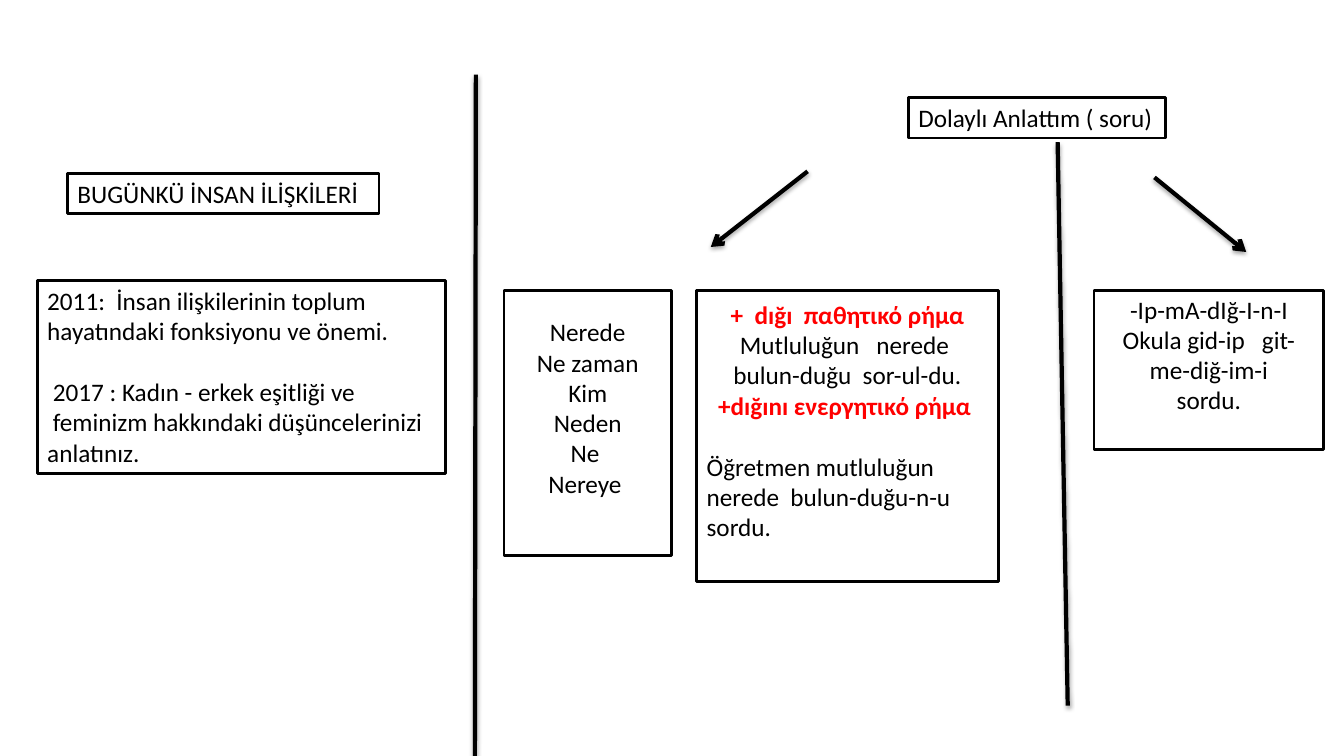
"""Builds a slide of boxed notes on human relations and Turkish indirect questions."""
import pptx
import pptx.util
import pptx.dml.color
import pptx.enum.shapes
import pptx.enum.text
import pptx.oxml
import pptx.oxml.ns
import lxml.etree

Inches, Pt = pptx.util.Inches, pptx.util.Pt
RGB = pptx.dml.color.RGBColor.from_string
qn = pptx.oxml.ns.qn
Fit = pptx.enum.text.MSO_AUTO_SIZE
Align = pptx.enum.text.PP_ALIGN
Anchor = pptx.enum.text.MSO_ANCHOR
Kind = pptx.enum.shapes

COLORS = {"ink": "000000", "paper": "FFFFFF", "red": "FF0000"}
GAP = Pt(22)
SHADOW = (
    f'<a:effectLst {pptx.oxml.ns.nsdecls("a")}>'
    '<a:outerShdw blurRad="40000" dist="23000" dir="5400000" rotWithShape="0">'
    f'<a:srgbClr val="{COLORS["ink"]}"><a:alpha val="35000"/></a:srgbClr>'
    '</a:outerShdw></a:effectLst>'
)

deck = pptx.Presentation()
deck.slide_width, deck.slide_height = Inches(13.33), Inches(7.5)
slide = deck.slides.add_slide(deck.slide_layouts[6])


def add_box(left, top, width, height):
    """Add a white box with a black border and return its text frame."""
    box = slide.shapes.add_shape(
        Kind.MSO_SHAPE.RECTANGLE, Inches(left), Inches(top), Inches(width), Inches(height))
    box.shadow.inherit = False
    box.fill.solid()
    box.fill.fore_color.rgb = RGB(COLORS["paper"])
    box.line.color.rgb = RGB(COLORS["ink"])
    box.line.width = Pt(2)
    box.text_frame.word_wrap = True
    return box.text_frame


def add_line(frame, index, text, align, color="ink", gap=0):
    """Write one paragraph and return it; red text is bold."""
    para = frame.add_paragraph() if index else frame.paragraphs[0]
    para.alignment = align
    if gap:
        para.space_before = gap
    run = para.add_run()
    run.text = text
    run.font.name, run.font.size = "Calibri", Pt(18)
    run.font.bold = color == "red"
    run.font.color.rgb = RGB(COLORS[color])
    return para


topics = add_box(0.37, 2.78, 4.05, 1.92)
topics.vertical_anchor = Anchor.TOP
topics.auto_size = Fit.SHAPE_TO_FIT_TEXT
for i, (text, gap) in enumerate([
    (":  İnsan ilişkilerinin toplum", 0),
    ("hayatındaki fonksiyonu ve önemi.", 0),
    (" 2017 : Kadın - erkek eşitliği ve", GAP),
    (" feminizm hakkındaki düşüncelerinizi", 0),
    ("anlatınız.", 0),
]):
    para = add_line(topics, i, text, Align.LEFT, gap=gap)
    if i < 2:
        props = para._p.get_or_add_pPr()
        props.set("marL", str(Inches(0.38)))
        props.set("indent", str(-Inches(0.38)))
    if i == 0:
        lxml.etree.SubElement(props, qn("a:buAutoNum"), type="arabicPlain", startAt="2011")

for place, text, wrap in [
    ((0.67, 1.72, 3.09, 0.4), "BUGÜNKÜ İNSAN İLİŞKİLERİ", True),
    ((9.01, 0.97, 2.55, 0.4), "Dolaylı Anlattım ( soru)", False),
]:
    title = add_box(*place)
    title.word_wrap = wrap
    title.vertical_anchor = Anchor.TOP
    title.auto_size = Fit.SHAPE_TO_FIT_TEXT
    add_line(title, 0, text, Align.LEFT)

mid = Align.CENTER
for place, lines in [
    ((5, 2.88, 1.66, 2.63), [
        (word, mid) for word in ("Nerede", "Ne zaman", "Kim", "Neden", "Ne ", "Nereye ")]),
    ((6.91, 2.88, 2.99, 2.89), [
        ("+  dığı  παθητικό ρήμα", mid, "red"),
        ("Mutluluğun   nerede  bulun-duğu  sor-ul-du.", mid),
        ("+dığını ενεργητικό ρήμα ", mid, "red"),
        ("Öğretmen mutluluğun   nerede  bulun-duğu-n-u  sordu.", Align.LEFT, "ink", GAP)]),
    ((10.85, 2.88, 2.28, 1.58), [
        ("-Ιp-mA-dIğ-I-n-I", mid),
        ("Okula gid-ip   git-me-diğ-im-i", mid),
        ("sordu.", mid)]),
]:
    frame = add_box(*place)
    frame.vertical_anchor = Anchor.MIDDLE
    frame.margin_bottom = Inches(0.05) + GAP
    for i, line in enumerate(lines):
        add_line(frame, i, *line)

for x1, y1, x2, y2, arrow in [
    (8.01, 1.7, 7.05, 2.45, True),
    (11.45, 1.76, 12.36, 2.5, True),
    (4.72, 0.74, 4.71, 7.5, False),
    (10.49, 1.41, 10.59, 7, False),
]:
    link = slide.shapes.add_connector(
        Kind.MSO_CONNECTOR.STRAIGHT, Inches(x1), Inches(y1), Inches(x2), Inches(y2))
    link.line.color.rgb = RGB(COLORS["ink"])
    link.line.width = Pt(3)
    props = link.element.spPr
    if arrow:
        lxml.etree.SubElement(props.find(qn("a:ln")), qn("a:tailEnd"), type="arrow")
    props.append(pptx.oxml.parse_xml(SHADOW))

deck.save("out.pptx")
